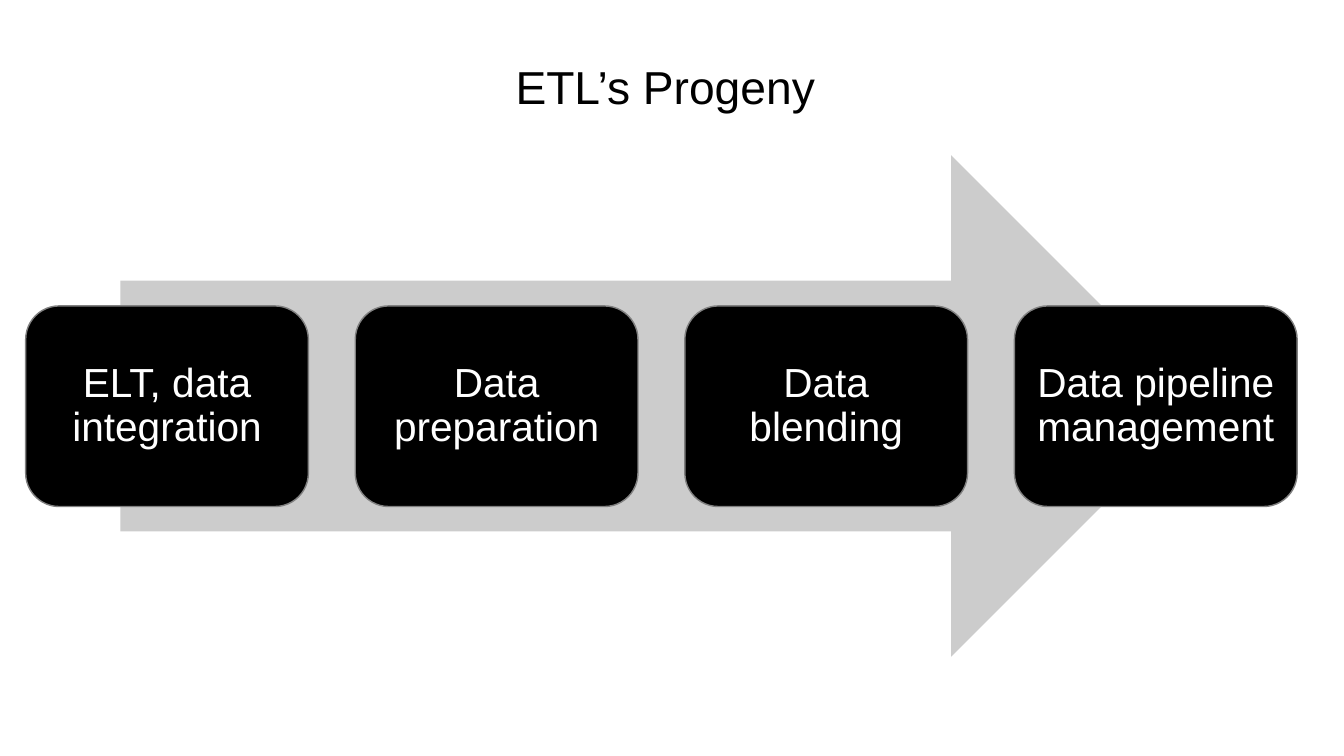
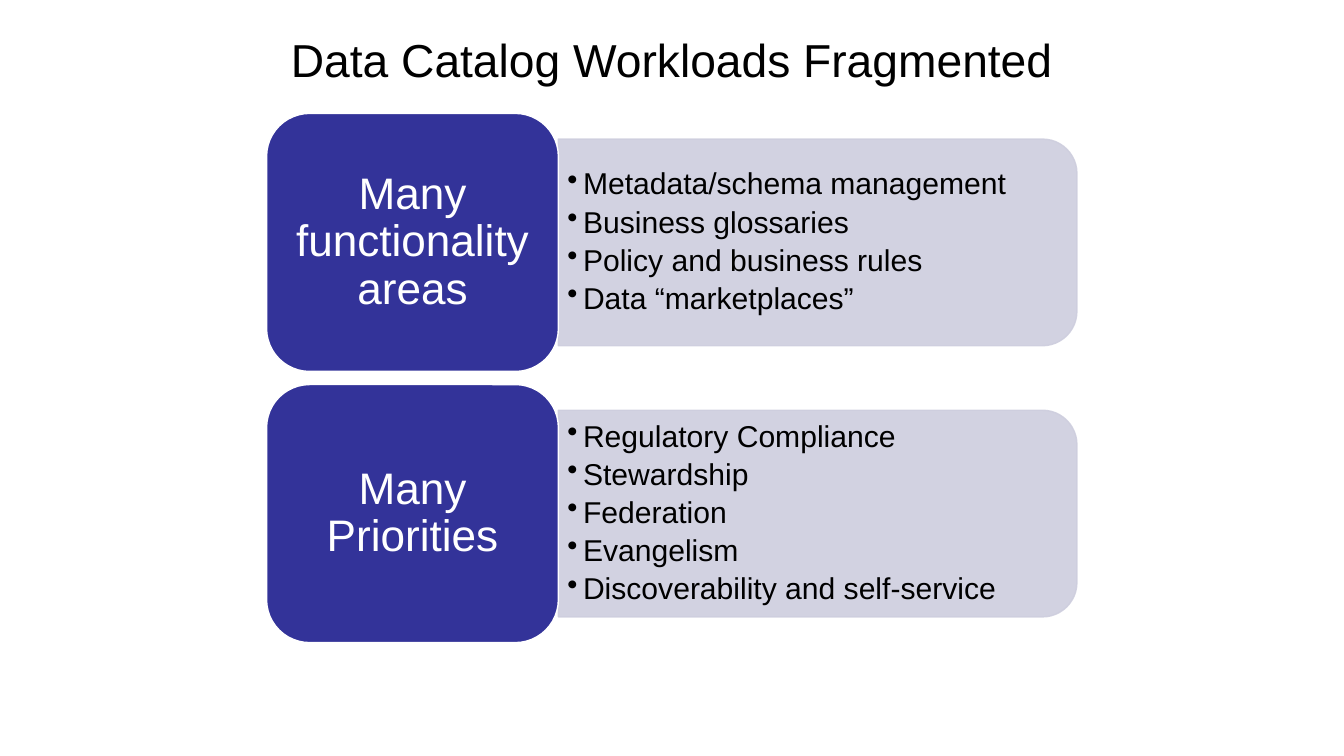
"""Build two slides on ETL's successors and fragmented data catalog workloads."""
import pptx
import pptx.util
from pptx.dml.color import RGBColor
from pptx.enum.shapes import MSO_SHAPE
from pptx.enum.text import MSO_ANCHOR, MSO_AUTO_SIZE, PP_ALIGN
from pptx.oxml.ns import qn
from lxml import etree

Inches, Pt = pptx.util.Inches, pptx.util.Pt

COLORS = {
    "white": "FFFFFF",
    "black": "000000",
    "arrow": "CCCCCC",
    "step_edge": "808080",
    "theme": "333399",
    "panel": "CECEDE",
}
FONT = "Arial"
TITLE_SIZE, STEP_SIZE, THEME_SIZE, POINT_SIZE = 66, 58, 63, 43

PROGENY_TITLE = "ETL’s Progeny "
PROGENY = ["ELT, data integration", "Data preparation", "Data blending", "Data pipeline management"]

WORKLOADS_TITLE = "Data Catalog Workloads Fragmented"
WORKLOADS = [
    ("Many functionality areas", [
        "Metadata/schema management",
        "Business glossaries",
        "Policy and business rules",
        "Data “marketplaces”",
    ]),
    ("Many Priorities", [
        "Regulatory Compliance",
        "Stewardship",
        "Federation",
        "Evangelism",
        "Discoverability and self-service",
    ]),
]


def rgb(name):
    return RGBColor.from_string(COLORS[name])


def set_frame(frame, side, top):
    frame.word_wrap = True
    frame.auto_size = MSO_AUTO_SIZE.NONE
    frame.vertical_anchor = MSO_ANCHOR.MIDDLE
    frame.margin_left = frame.margin_right = Inches(side)
    frame.margin_top = frame.margin_bottom = Inches(top)


def add_text(paragraph, text, size, color, align=PP_ALIGN.CENTER, spacing=0.9):
    paragraph.alignment = align
    paragraph.line_spacing = spacing
    run = paragraph.add_run()
    run.text = text
    run.font.size = Pt(size)
    run.font.name = FONT
    run.font.color.rgb = rgb(color)


def add_titled_slide(deck, title, box):
    slide = deck.slides.add_slide(deck.slide_layouts[5])
    holder = slide.shapes.title
    holder.left, holder.top, holder.width, holder.height = map(Inches, box)
    set_frame(holder.text_frame, 0.04, 0.04)
    add_text(holder.text_frame.paragraphs[0], title, TITLE_SIZE, "black", spacing=1.0)
    return slide


def add_block(slide, preset, box, fill, edge=None):
    block = slide.shapes.add_shape(preset, *map(Inches, box))
    block.shadow.inherit = False
    block.fill.solid()
    block.fill.fore_color.rgb = rgb(fill)
    if edge:
        block.line.color.rgb = rgb(edge)
        block.line.width = Pt(2)
    else:
        block.line.fill.background()
    return block


def add_label_block(slide, box, text, size, fill, edge, margins):
    block = add_block(slide, MSO_SHAPE.ROUNDED_RECTANGLE, box, fill, edge)
    set_frame(block.text_frame, *margins)
    add_text(block.text_frame.paragraphs[0], text, size, "white")


def add_panel(slide, left, middle, width, height):
    center = left + width / 2
    box = (center - height / 2, middle - width / 2, height, width)
    panel = add_block(slide, MSO_SHAPE.ROUND_2_SAME_RECTANGLE, box, "panel", "panel")
    panel.rotation = 90
    for color in panel._element.spPr.iter(qn("a:srgbClr")):
        etree.SubElement(color, qn("a:alpha"), val="90000")


def add_points(slide, points, box):
    frame = slide.shapes.add_textbox(*map(Inches, box)).text_frame
    set_frame(frame, 0.18, 0.09)
    for index, point in enumerate(points):
        paragraph = frame.add_paragraph() if index else frame.paragraphs[0]
        properties = paragraph._p.get_or_add_pPr()
        properties.set("marL", str(Inches(0.31)))
        properties.set("indent", str(-Inches(0.31)))
        etree.SubElement(properties, qn("a:buChar"), char="•")
        if index:
            paragraph.space_before = Pt(8)
        add_text(paragraph, point, POINT_SIZE, "black", PP_ALIGN.LEFT)


def build_progeny(deck):
    slide = add_titled_slide(deck, PROGENY_TITLE, (1.83, 0.8, 23, 1.83))
    add_block(slide, MSO_SHAPE.RIGHT_ARROW, (2.39, 3.08, 21.46, 9.95), "arrow")
    left, pitch = 0.51, 6.54
    for index, step in enumerate(PROGENY):
        box = (left + index * pitch, 6.07, 5.61, 3.98)
        add_label_block(slide, box, step, STEP_SIZE, "black", "step_edge", (0.24, 0.24))


def build_workloads(deck):
    slide = add_titled_slide(deck, WORKLOADS_TITLE, (0.68, 0.26, 25.3, 1.82))
    left, top, width, height, pitch = 5.29, 2.25, 5.79, 5.12, 5.38
    right = left + width
    for index, (theme, points) in enumerate(WORKLOADS):
        row_top = top + index * pitch
        middle = row_top + height / 2
        add_panel(slide, right, middle, 10.29, 4.1)
        add_points(slide, points, (right, middle - 1.85, 10.09, 3.7))
        add_label_block(slide, (left, row_top, width, height), theme, THEME_SIZE,
                        "theme", "white", (0.26, 0.13))


def main():
    deck = pptx.Presentation()
    deck.slide_width, deck.slide_height = Inches(26.67), Inches(15)
    build_progeny(deck)
    build_workloads(deck)
    deck.save("out.pptx")


if __name__ == "__main__":
    main()
